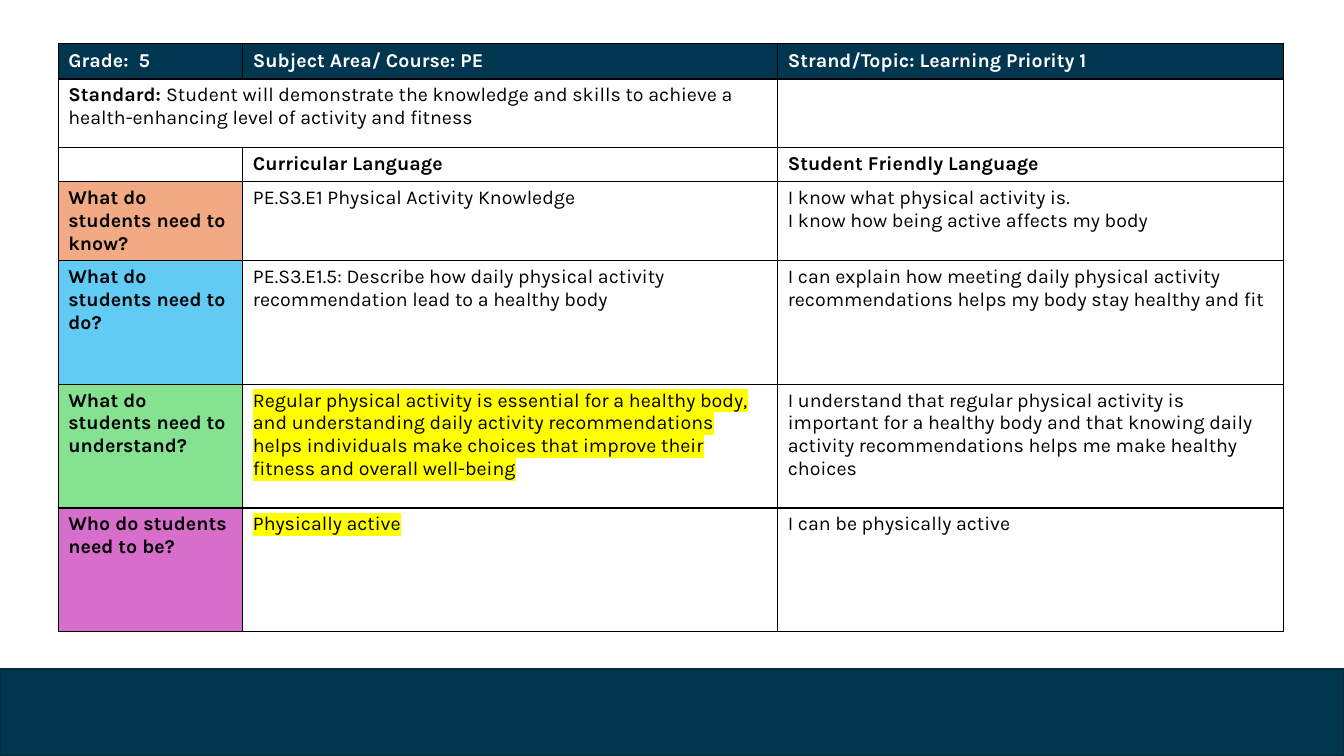
from dataclasses import dataclass

from lxml.etree import SubElement
from pptx import Presentation
from pptx.dml.color import RGBColor
from pptx.enum.shapes import MSO_SHAPE
from pptx.enum.text import MSO_ANCHOR
from pptx.oxml.ns import qn
from pptx.util import Cm, Pt


@dataclass(frozen=True)
class Theme:
    face: str = "Karla"
    size: int = 14
    ink: str = "000000"
    paper: str = "FFFFFF"
    head: str = "00364F"
    band: str = "00374F"
    edge: str = "092A39"
    mark: str = "FFFF00"
    asks: tuple = ("F2AA84", "61CBF4", "84E291", "D86ECC")


THEME = Theme()
WIDE, HIGH = Cm(33.87), Cm(19.05)
COLS = (4.65, 13.48, 12.74)
TALL = (0.9, 1.73, 0.79, 1.93, 3.12, 3.12, 3.12)

HEADS = ("Grade:  5", "Subject Area/ Course: PE", "Strand/Topic: Learning Priority 1")
GOAL = ("Standard: ", "Student will demonstrate the knowledge and skills to achieve "
        "a health-enhancing level of activity and fitness")
LABELS = ("", "Curricular Language", "Student Friendly Language")

# Question, curricular wording, student wording, highlighted or not
ASKS = (
    ("What do students need to know?",
     "PE.S3.E1 Physical Activity Knowledge",
     "I know what physical activity is.\nI know how being active affects my body", False),
    ("What do students need to do?",
     "PE.S3.E1.5: Describe how daily physical activity recommendation lead to a healthy body",
     "I can explain how meeting daily physical activity recommendations helps my body "
     "stay healthy and fit", False),
    ("What do students need to understand?",
     "Regular physical activity is essential for a healthy body, and understanding daily "
     "activity recommendations helps individuals make choices that improve their fitness "
     "and overall well-being",
     "I understand that regular physical activity is important for a healthy body and that "
     "knowing daily activity recommendations helps me make healthy choices", True),
    ("Who do students need to be?", "Physically active", "I can be physically active", True),
)


def rgb(code):
    return RGBColor.from_string(code)


def add_run(para, text, bold=False, ink=THEME.ink, mark=False):
    run = para.add_run()
    run.text = text
    style = {"name": THEME.face, "size": Pt(THEME.size), "bold": bold}
    for key, value in style.items():
        setattr(run.font, key, value)
    run.font.color.rgb = rgb(ink)
    if mark:
        fill = run.font._element.find(qn("a:solidFill")) if hasattr(run.font, "_element") \
            else run._r.get_or_add_rPr().find(qn("a:solidFill"))
        glow = SubElement(fill.getparent(), qn("a:highlight"))
        SubElement(glow, qn("a:srgbClr"), val=THEME.mark)
        fill.addnext(glow)


def write(cell, text, **style):
    frame = cell.text_frame
    for i, line in enumerate(text.split("\n")):
        para = frame.add_paragraph() if i else frame.paragraphs[0]
        if line:
            add_run(para, line, **style)


def paint(cell, fill=THEME.paper):
    # Borders come before the fill in the cell properties
    props = cell._tc.get_or_add_tcPr()
    for side in ("lnL", "lnR", "lnT", "lnB"):
        line = SubElement(props, qn("a:" + side), w=str(Pt(1)))
        paint_line = SubElement(line, qn("a:solidFill"))
        SubElement(paint_line, qn("a:srgbClr"), val=THEME.ink)
    cell.fill.solid()
    cell.fill.fore_color.rgb = rgb(fill)


def add_band(slide):
    band = slide.shapes.add_shape(MSO_SHAPE.RECTANGLE, 0, Cm(16.86), WIDE, Cm(2.19))
    band.shadow.inherit = False
    band.fill.solid()
    band.fill.fore_color.rgb = rgb(THEME.band)
    band.line.color.rgb = rgb(THEME.edge)
    band.line.width = Pt(1.5)


def add_grid(slide):
    frame = slide.shapes.add_table(len(TALL), len(COLS), Cm(1.47), Cm(1.09),
                                   Cm(sum(COLS)), Cm(sum(TALL)))
    grid = frame.table
    grid.first_row = grid.horz_banding = False
    for col, width in zip(grid.columns, COLS):
        col.width = Cm(width)
    for row, height in zip(grid.rows, TALL):
        row.height = Cm(height)
    return grid


def fill_grid(grid):
    # Header and label rows
    for c, (head, label) in enumerate(zip(HEADS, LABELS)):
        top = grid.cell(0, c)
        top.vertical_anchor = MSO_ANCHOR.MIDDLE
        write(top, head, bold=True, ink=THEME.paper)
        write(grid.cell(2, c), label, bold=True)

    # Standard across two columns
    goal = grid.cell(1, 0)
    goal.merge(grid.cell(1, 1))
    for text, bold in zip(GOAL, (True, False)):
        write(goal, text, bold=bold)

    # Question rows
    for r, (ask, course, pupil, mark) in enumerate(ASKS, 3):
        write(grid.cell(r, 0), ask, bold=True)
        write(grid.cell(r, 1), course, mark=mark)
        write(grid.cell(r, 2), pupil)

    # Fills, borders and the type size of empty cells
    for r in range(len(TALL)):
        for c in range(len(COLS)):
            cell = grid.cell(r, c)
            ask = r > 2 and c == 0
            paint(cell, THEME.head if r == 0 else THEME.asks[r - 3] if ask else THEME.paper)
            if not cell.text_frame.text:
                SubElement(cell.text_frame.paragraphs[0]._p, qn("a:endParaRPr"),
                           sz=str(THEME.size * 100))


def main():
    deck = Presentation()
    deck.slide_width, deck.slide_height = WIDE, HIGH
    slide = deck.slides.add_slide(deck.slide_layouts[6])
    add_band(slide)
    fill_grid(add_grid(slide))
    deck.save("out.pptx")


if __name__ == "__main__":
    main()
